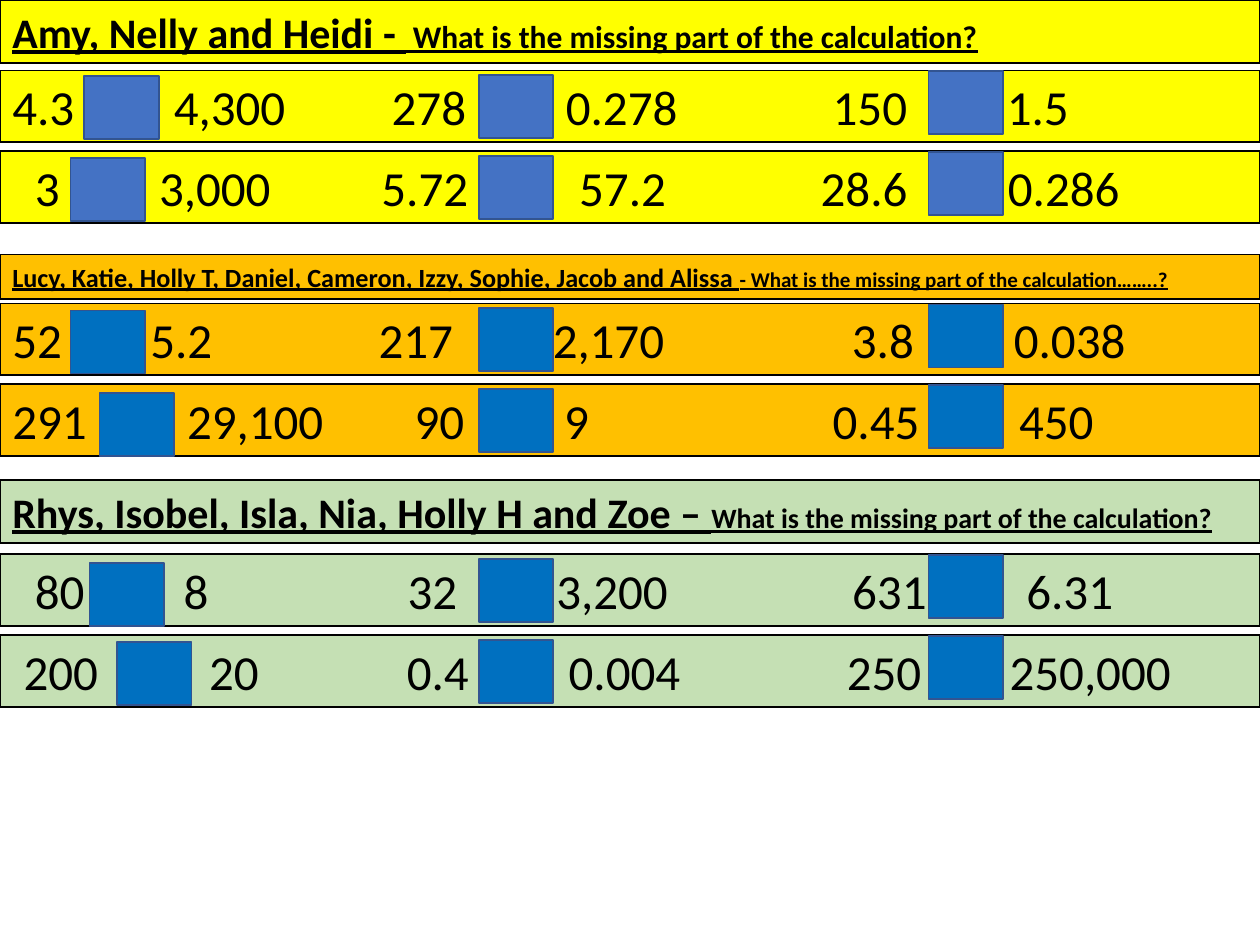
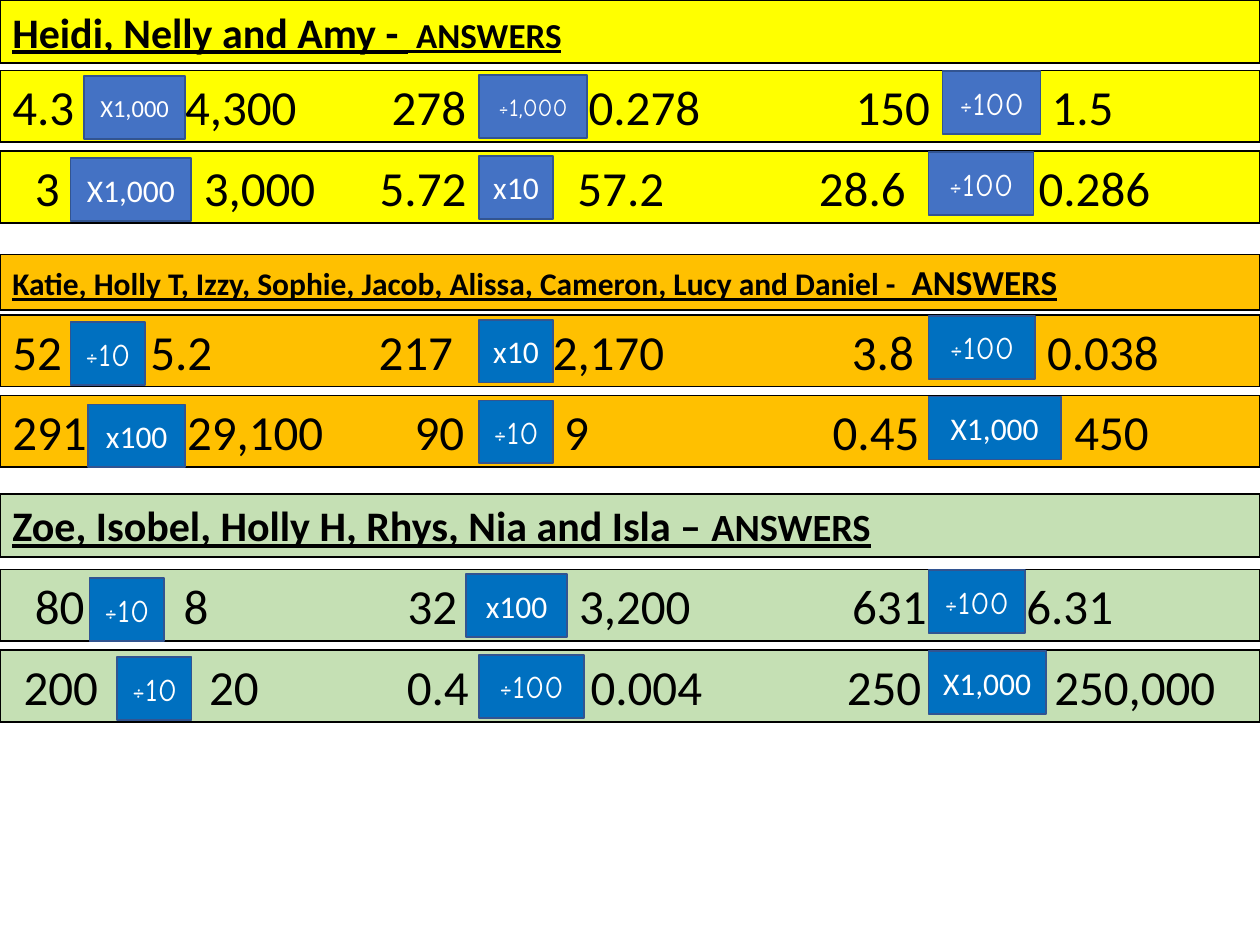
from dataclasses import dataclass

from lxml import etree
from pptx import Presentation
from pptx.dml.color import RGBColor
from pptx.enum.shapes import MSO_SHAPE as Shape
from pptx.enum.text import MSO_ANCHOR as Anchor, PP_ALIGN as Align
from pptx.oxml.ns import qn
from pptx.util import Pt


@dataclass(frozen=True)
class Theme:
    yellow: str = "FFFF00"
    orange: str = "FFC000"
    green: str = "C5E0B4"
    indigo: str = "4472C4"
    blue: str = "0070C0"
    box_line: str = "325491"
    black: str = "000000"
    white: str = "FFFFFF"
    font: str = "Calibri"
    divide_font: str = "Comic Neue"
    number_size: float = 28
    label_size: float = 18
    small_label_size: float = 14


theme = Theme()

SLIDE_WIDTH, SLIDE_HEIGHT = 720, 540
ROW_HEIGHT, ROW_STEP = 41, 46.1
BOX_HEIGHT, BOX_WIDTH = 36, 42.5
MIDDLE_X, RIGHT_X = 273.6, 530.6
MIDDLE_DROP, RIGHT_DROP = 2.7, 0.5

# Each group: fill, box fill, heading top and height, first row top, heading runs, rows.
# Each row: numbers, their left edges, drop of the first box, boxes (left, width, label, size).
QUESTION = "What is the missing part of the calculation?"
LABEL, SMALL = theme.label_size, theme.small_label_size


def blank_boxes(first_x):
    return [(x, BOX_WIDTH, "", LABEL) for x in (first_x, MIDDLE_X, RIGHT_X)]


question_groups = [
    (theme.yellow, theme.indigo, 0, 36, 40.3,
     [("Amy, Nelly and Heidi - ", 24), (" " + QUESTION, 18)],
     [("4.3 4,300 278 0.278 150 1.5", (7.2, 99.5, 224, 323.5, 476, 575.5), 3, blank_boxes(48.2)),
      ("3 3,000 5.72 57.2 28.6 0.286", (20, 91, 218, 331, 469, 576), 4, blank_boxes(40.3))]),
    (theme.orange, theme.blue, 145.5, 25.2, 173.5,
     [("Lucy, Katie, Holly T, Daniel, Cameron, Izzy, Sophie, Jacob and Alissa ", 15),
      ("- What is the missing part of the calculation……..?", 12)],
     [("52 5.2 217 2,170 3.8 0.038", (7.2, 86, 216.5, 316, 487, 579.5), 4, blank_boxes(40.3)),
      ("291 29,100 90 9 0.45 450", (7.2, 107, 237, 322.5, 476, 582.5), 5, blank_boxes(56.9))]),
    (theme.green, theme.blue, 274.3, 36, 316.8,
     [("Rhys, Isobel, Isla, Nia, Holly H and Zoe – ", 24), (QUESTION, 16)],
     [("80 8 32 3,200 631 6.31", (20, 105, 233, 318, 487, 586.5), 5, blank_boxes(51.1)),
      ("200 20 0.4 0.004 250 250,000", (13.5, 119.5, 232.5, 325, 484, 577), 4, blank_boxes(67))]),
]

answer_groups = [
    (theme.yellow, theme.indigo, 0, 36, 40.3,
     [("Heidi, Nelly and Amy - ", 24), (" ANSWERS", 20)],
     [("4.3 4,300 278 0.278 150 1.5", (7.2, 106, 224, 336.5, 489, 601), 3,
       [(48.2, 57.6, "X1,000", SMALL), (MIDDLE_X, 62, "÷1,000", SMALL), (538.6, 56, "÷100", LABEL)]),
      ("3 3,000 5.72 57.2 28.6 0.286", (20, 116.5, 217, 330, 468, 593.5), 4,
       [(40.3, 69, "X1,000", LABEL), (MIDDLE_X, BOX_WIDTH, "x10", LABEL),
        (RIGHT_X, 60, "÷100", LABEL)])]),
    (theme.orange, theme.blue, 145.5, 31.7, 180,
     [("Katie, Holly T, Izzy, Sophie, Jacob, Alissa, Cameron, Lucy and Daniel - ", 18),
      (" ANSWERS", 20)],
     [("52 5.2 217 2,170 3.8 0.038", (7.2, 86, 216.5, 316, 487, 598.5), 4,
       [(40.3, BOX_WIDTH, "÷10", LABEL), (MIDDLE_X, BOX_WIDTH, "x10", LABEL),
        (RIGHT_X, 61, "÷100", LABEL)]),
      ("291 29,100 90 9 0.45 450", (7.2, 107, 237, 322.5, 476, 614), 5,
       [(50.4, 55.5, "x100", LABEL), (MIDDLE_X, BOX_WIDTH, "÷10", LABEL),
        (RIGHT_X, 75.6, "X1,000", LABEL)])]),
    (theme.green, theme.blue, 282.2, 36, 325.4,
     [("Zoe, Isobel, Holly H, Rhys, Nia and Isla – ", 24), ("ANSWERS", 22)],
     [("80 8 32 3,200 631 6.31", (20, 105, 233, 331, 487, 586.5), 5,
       [(51.1, BOX_WIDTH, "÷10", LABEL), (266.4, 57.6, "x100", LABEL),
        (RIGHT_X, 55, "÷100", LABEL)]),
      ("200 20 0.4 0.004 250 250,000", (13.5, 119.5, 232.5, 337.5, 484, 602.5), 4,
       [(67, BOX_WIDTH, "÷10", LABEL), (MIDDLE_X, 60, "÷100", LABEL),
        (RIGHT_X, 67, "X1,000", LABEL)])]),
]


def add_box(slide, runs, left, top, width, height, fill, line=theme.black, color=theme.black,
            font=theme.font, heading=False, centred=False, inset=7.2):
    """Add a filled rectangle with one line of (text, size) runs; return its paragraph."""
    shape = slide.shapes.add_shape(Shape.RECTANGLE, Pt(left), Pt(top), Pt(width), Pt(height))
    shape.shadow.inherit = False
    shape.fill.solid()
    shape.fill.fore_color.rgb = RGBColor.from_string(fill)
    shape.line.color.rgb = RGBColor.from_string(line)
    shape.line.width = Pt(1)
    frame = shape.text_frame
    frame.word_wrap = True
    frame.margin_left = Pt(inset)
    frame.vertical_anchor = Anchor.MIDDLE if centred else Anchor.TOP
    paragraph = frame.paragraphs[0]
    paragraph.alignment = Align.CENTER if centred else Align.LEFT
    for text, size in runs:
        run = paragraph.add_run()
        run.text = text
        run.font.name = font
        run.font.size = Pt(size)
        run.font.bold = run.font.underline = heading
        run.font.color.rgb = RGBColor.from_string(color)
    return paragraph


presentation = Presentation()
presentation.slide_width, presentation.slide_height = Pt(SLIDE_WIDTH), Pt(SLIDE_HEIGHT)

for groups in (question_groups, answer_groups):
    slide = presentation.slides.add_slide(presentation.slide_layouts[6])
    for fill, box_fill, heading_top, heading_height, rows_top, heading, rows in groups:
        # Group heading
        add_box(slide, heading, 0, heading_top, SLIDE_WIDTH, heading_height, fill, heading=True)

        for index, (numbers, starts, first_drop, boxes) in enumerate(rows):
            # Row of numbers, spaced by tab stops
            top = rows_top + index * ROW_STEP
            text = "\t".join(numbers.split())
            paragraph = add_box(slide, [(text, theme.number_size)], 0, top, SLIDE_WIDTH,
                                ROW_HEIGHT, fill, inset=starts[0])
            properties = paragraph._p.get_or_add_pPr()
            tab_list = etree.SubElement(properties, qn("a:tabLst"))
            for start in starts[1:]:
                etree.SubElement(tab_list, qn("a:tab"), pos=str(Pt(start - starts[0])), algn="l")

            # Operation boxes
            drops = (first_drop, MIDDLE_DROP, RIGHT_DROP)
            for drop, (left, width, label, size) in zip(drops, boxes):
                add_box(slide, [(label, size)] if label else [], left, top + drop, width,
                        BOX_HEIGHT, box_fill, line=theme.box_line, color=theme.white,
                        font=theme.divide_font if label.startswith("÷") else theme.font,
                        centred=True)

presentation.save("out.pptx")
